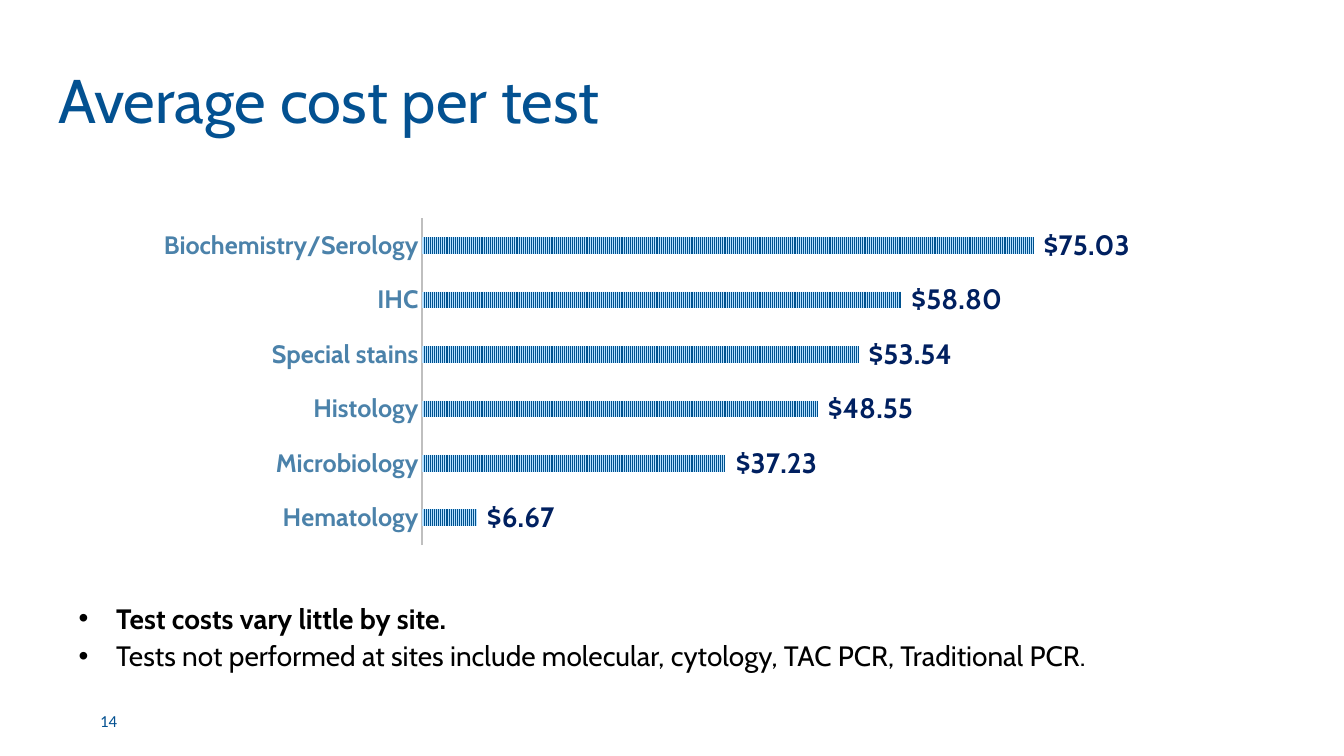
from lxml import etree
from pptx import Presentation
from pptx import util as u
from pptx.chart.data import CategoryChartData
from pptx.dml.color import RGBColor
from pptx.enum import chart as charts, dml, text
from pptx.oxml import ns

BLUE = RGBColor(0x03, 0x51, 0x91)
BLACK = RGBColor(0, 0, 0)
NAVY = RGBColor(0x00, 0x20, 0x60)
STEEL = RGBColor(0x4B, 0x82, 0xAA)
GREY = RGBColor(0xBF, 0xBF, 0xBF)
STRIPE = RGBColor(0x00, 0x52, 0x8F)
PALE = RGBColor(0xB6, 0xE0, 0xFF)
DOLLARS = '_("$"* #,##0.00_)'

COSTS = {
    "Hematology": 6.67,
    "Microbiology": 37.23,
    "Histology": 48.55,
    "Special stains": 53.54,
    "IHC": 58.80,
    "Biochemistry/Serology": 75.03,
}
FINDINGS = [
    ("Test costs vary little by site.", True),
    ("Tests not performed at sites include molecular, cytology, "
     "TAC PCR, Traditional PCR.", False),
]


def style_font(font, size, color, name="Cabin", bold=False):
    font.name = name
    font.size = u.Pt(size)
    font.bold = bold
    font.color.rgb = color


def write(paragraph, content, align=text.PP_ALIGN.LEFT, spacing=1.0, **style):
    paragraph.alignment = align
    paragraph.line_spacing = spacing
    run = paragraph.add_run()
    run.text = content
    style_font(run.font, **style)


class CostSlide:
    def __init__(self, deck):
        self.slide = deck.slides.add_slide(deck.slide_layouts[6])

    def label(self, content, box, anchor=text.MSO_ANCHOR.MIDDLE,
              bullet=False, **style):
        frame = self.slide.shapes.add_textbox(*map(u.Cm, box)).text_frame
        frame.word_wrap = True
        frame.vertical_anchor = anchor
        paragraph = frame.paragraphs[0]
        if bullet:
            props = paragraph._p.get_or_add_pPr()
            props.set("marL", str(u.Cm(0.95)))
            props.set("indent", str(-u.Cm(0.95)))
            etree.SubElement(props, ns.qn("a:buFont")).set("typeface", "Arial")
            etree.SubElement(props, ns.qn("a:buChar")).set("char", "•")
        write(paragraph, content, **style)

    def bars(self, costs, box, plot_area):
        data = CategoryChartData(number_format=DOLLARS)
        data.categories = list(costs)
        data.add_series("Series 1", list(costs.values()))
        chart = self.slide.shapes.add_chart(
            charts.XL_CHART_TYPE.BAR_CLUSTERED, *map(u.Cm, box), data).chart
        chart.has_legend = False
        chart.has_title = False
        style_font(chart.font, 18, BLACK, bold=True)

        tests = chart.category_axis
        tests.major_tick_mark = charts.XL_TICK_MARK.NONE
        tests.has_major_gridlines = False
        tests.format.line.color.rgb = GREY
        tests.format.line.width = u.Pt(1.5)
        style_font(tests.tick_labels.font, 18, STEEL, bold=True)

        dollars = chart.value_axis
        dollars.minimum_scale = 0
        dollars.maximum_scale = 80
        dollars.has_major_gridlines = False
        dollars.visible = False

        plot = chart.plots[0]
        plot.gap_width = 227
        plot.overlap = -48
        plot.vary_by_categories = False
        fill = plot.series[0].format.fill
        fill.patterned()
        fill.pattern = dml.MSO_PATTERN.NARROW_VERTICAL
        fill.fore_color.rgb = STRIPE
        fill.back_color.rgb = PALE

        amounts = plot.series[0].data_labels
        amounts.show_value = True
        amounts.position = charts.XL_LABEL_POSITION.OUTSIDE_END
        amounts.number_format = DOLLARS
        amounts.number_format_is_linked = False
        style_font(amounts.font, 20, NAVY, bold=True)
        self.place_plot(chart, plot_area)

    def place_plot(self, chart, plot_area):
        area = chart._chartSpace.chart.plotArea
        for old in area.findall(ns.qn("c:layout")):
            area.remove(old)
        layout = etree.Element(ns.qn("c:layout"))
        area.insert(0, layout)
        manual = etree.SubElement(layout, ns.qn("c:manualLayout"))
        settings = [("layoutTarget", "inner"), ("xMode", "edge"),
                    ("yMode", "edge"), *zip("xywh", plot_area)]
        for tag, value in settings:
            etree.SubElement(manual, ns.qn(f"c:{tag}")).set("val", str(value))


def main():
    deck = Presentation()
    deck.slide_width = u.Cm(33.87)
    deck.slide_height = u.Cm(19.05)
    page = CostSlide(deck)
    page.label("Average cost per test", (1.22, 0.95, 29.21, 3.33),
               spacing=0.9, size=44, color=BLUE)
    page.label("14", (1.73, 17.65, 1.47, 1.02), align=text.PP_ALIGN.RIGHT,
               size=12, color=BLUE, name="Calibri")
    page.bars(COSTS, (2.32, 5.08, 29.21, 9.17), (0.285, 0.046, 0.562, 0.898))
    for row, (finding, bold) in enumerate(FINDINGS):
        page.label(finding, (1.73, 15.03 + 0.94 * row, 28.27, 1.12),
                   anchor=text.MSO_ANCHOR.TOP, bullet=True,
                   size=20, color=BLACK, bold=bold)
    deck.save("out.pptx")


if __name__ == "__main__":
    main()
